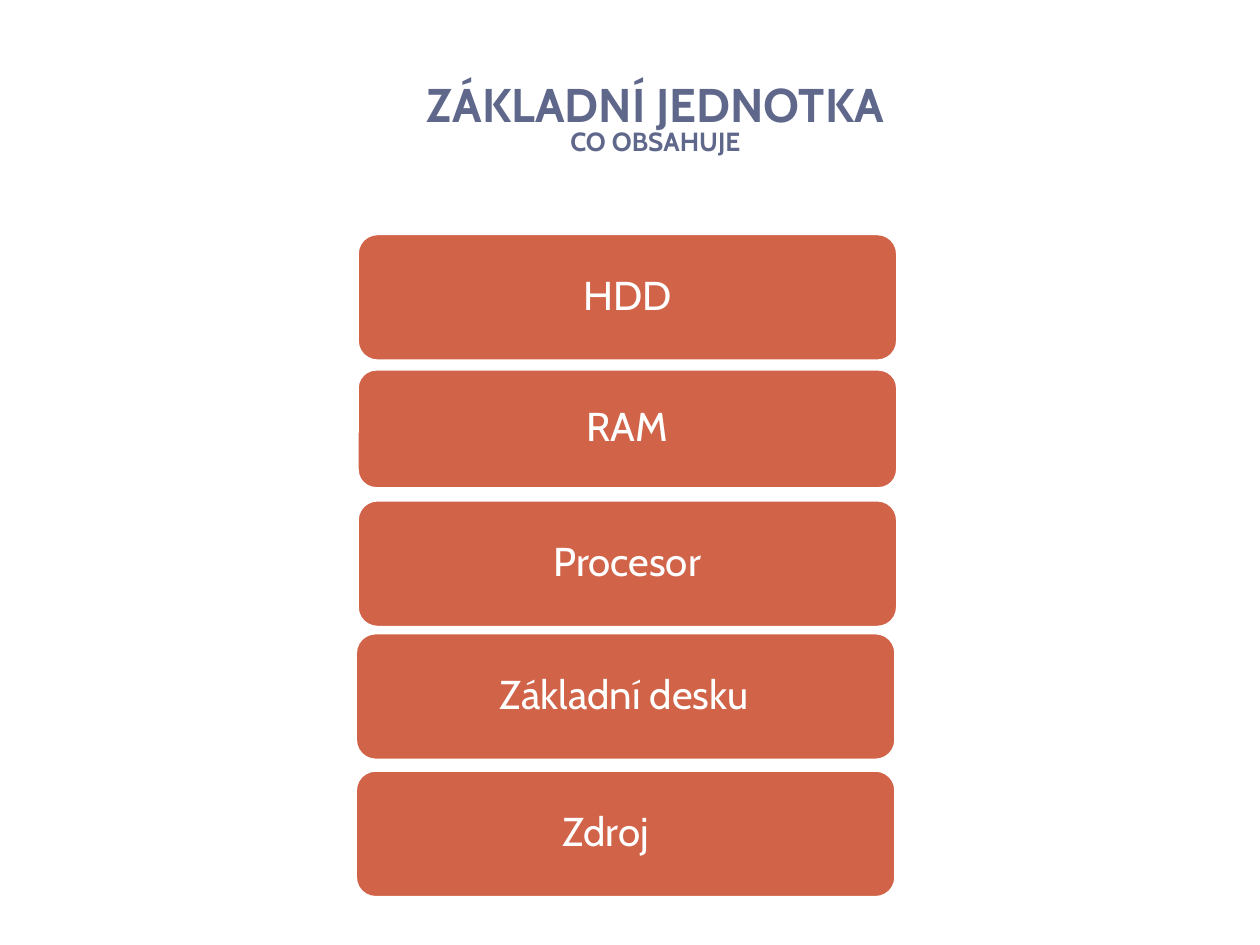
"""Build a slide listing the parts of a computer's base unit."""
from dataclasses import dataclass

from pptx import Presentation
from pptx import util as u
from pptx.dml import color
from pptx.enum import shapes, text


@dataclass(frozen=True)
class Theme:
    """Colours, font and type sizes of the slide."""
    font: str = "Cabin"
    title: color.RGBColor = color.RGBColor(0x5F, 0x68, 0x8B)
    box: color.RGBColor = color.RGBColor(0xD1, 0x63, 0x49)
    white: color.RGBColor = color.RGBColor(0xFF, 0xFF, 0xFF)
    title_size: float = 27
    subtitle_size: float = 15
    label_size: float = 23


THEME = Theme()


def write_text(shape, lines, *, ink, anchor, spacing, margins, bold=False):
    """Write (words, size) lines as one centred paragraph with line breaks."""
    frame = shape.text_frame
    frame.word_wrap = True
    frame.vertical_anchor = anchor
    frame.margin_left = frame.margin_right = u.Pt(margins[0])
    frame.margin_top = frame.margin_bottom = u.Pt(margins[1])
    paragraph = frame.paragraphs[0]
    paragraph.alignment = text.PP_ALIGN.CENTER
    paragraph.line_spacing = spacing
    for index, (words, size) in enumerate(lines):
        if index:
            paragraph.add_line_break()
        run = paragraph.add_run()
        run.text = words
        run.font.name = THEME.font
        run.font.size = u.Pt(size)
        run.font.bold = bold
        run.font.color.rgb = ink


def add_title(slide, left, top, width, height):
    """Place the heading and its subtitle."""
    shape = slide.shapes.add_textbox(*map(u.Pt, (left, top, width, height)))
    write_text(
        shape,
        [("ZÁKLADNÍ JEDNOTKA", THEME.title_size), ("CO OBSAHUJE", THEME.subtitle_size)],
        ink=THEME.title, anchor=text.MSO_ANCHOR.BOTTOM, spacing=0.8,
        margins=(7.2, 3.6), bold=True,
    )


def add_component(slide, label, left, top, width, height):
    """Place one rounded box with its label."""
    shape = slide.shapes.add_shape(
        shapes.MSO_SHAPE.ROUNDED_RECTANGLE, *map(u.Pt, (left, top, width, height)))
    shape.adjustments[0] = 0.16
    shape.shadow.inherit = False
    shape.fill.solid()
    shape.fill.fore_color.rgb = THEME.box
    shape.line.color.rgb = THEME.white
    shape.line.width = u.Pt(2)
    write_text(
        shape, [(label, THEME.label_size)], ink=THEME.white,
        anchor=text.MSO_ANCHOR.MIDDLE, spacing=0.9, margins=(6.7, 3.8),
    )


def add_components(slide, left, width, rows):
    """Stack the component boxes from (label, shift, top, height) rows."""
    for label, shift, top, height in rows:
        add_component(slide, label, left + shift, top, width, height)


def main():
    """Build and save the presentation."""
    presentation = Presentation()
    presentation.slide_width = u.Pt(720)
    presentation.slide_height = u.Pt(540)
    slide = presentation.slides.add_slide(presentation.slide_layouts[6])
    add_components(slide, 203, 309, [
        ("HDD", 1, 133.4, 73),
        ("RAM", 1, 210.8, 68.5),
        ("Procesor", 1, 285.6, 73),
        ("Základní desku\t", 0, 361.5, 73),
        ("Zdroj\t", 0, 440, 73),
    ])
    add_title(slide, 43, 44, 663, 49)
    presentation.save("out.pptx")


if __name__ == "__main__":
    main()
